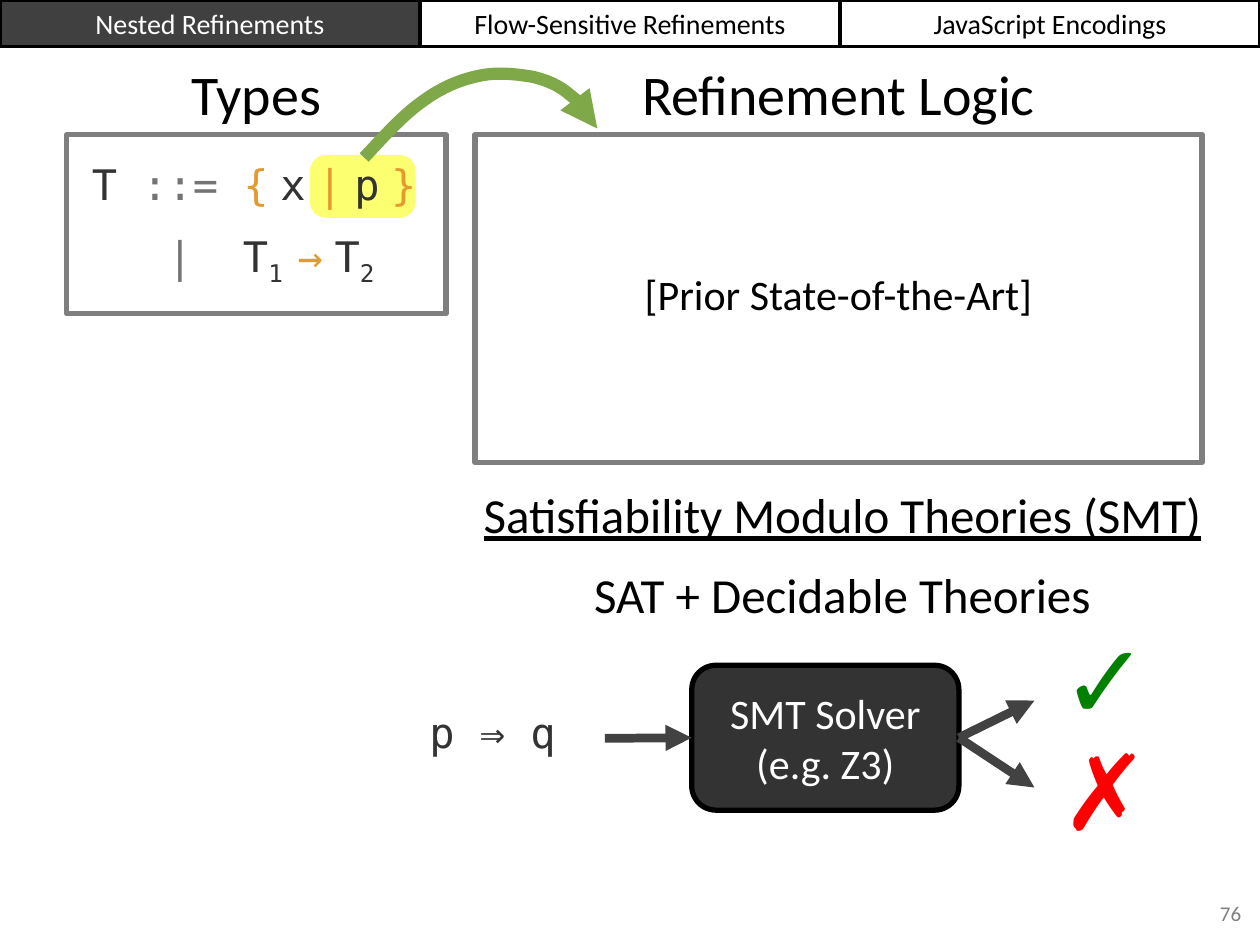
"""Build the slide on refinement types and the SMT solver behind them."""
from dataclasses import dataclass
from typing import Optional

from lxml import etree
from pptx import Presentation
from pptx import util as u
from pptx.dml import color
from pptx.enum import shapes, text
from pptx.oxml import ns

SANS, MONO, NARROW = "Calibri", "DejaVu Sans Mono", "Arial"
BLACK, WHITE, INK, GRAY, ORANGE = "000000", "FFFFFF", "333333", "747474", "E39B30"
PANEL_LINE, ARROW, GREEN_ARROW = "7F7F7F", "424242", "7FA849"
CENTER, LEFT, RIGHT = text.PP_ALIGN.CENTER, text.PP_ALIGN.LEFT, text.PP_ALIGN.RIGHT
ROUNDED, RECTANGLE = shapes.MSO_SHAPE.ROUNDED_RECTANGLE, shapes.MSO_SHAPE.RECTANGLE


@dataclass
class Box:
    left: float
    top: float
    width: float
    height: float

    def lengths(self) -> list:
        return [u.Inches(n) for n in (self.left, self.top, self.width, self.height)]


@dataclass
class Style:
    size: float
    font: str = SANS
    color: str = BLACK
    align: text.PP_ALIGN = CENTER
    wrap: bool = True


@dataclass
class Span:
    text: str
    color: str = INK
    subscript: bool = False
    font: str = MONO


@dataclass
class Label:
    text: str
    box: Box
    style: Style


@dataclass
class Tab:
    text: str
    ink: str = BLACK
    fill: Optional[str] = None


TABS = [Tab("Nested Refinements", WHITE, "404040"),
        Tab("Flow-Sensitive Refinements"), Tab("JavaScript Encodings")]
HEADING = Style(32)
LOGIC_TITLE = Box(3.77, 0.42, 5.77, 0.64)
PANELS = [Box(0.53, 1.07, 3.01, 1.42), Box(3.77, 1.07, 5.77, 2.6)]
LABELS = [
    Label("Types", Box(0.53, 0.42, 3.01, 0.64), HEADING),
    Label("[Prior State-of-the-Art]", Box(3.77, 1.83, 5.77, 1), Style(24)),
    Label("p ⇒ q", Box(3.31, 5.56, 1.37, 0.5), Style(24, MONO, INK, LEFT)),
    Label("✓", Box(8.33, 4.82, 0.84, 1.11), Style(60, "Arial", "008000", LEFT)),
    Label("✗", Box(8.33, 5.7, 0.69, 1.11), Style(60, "Arial", "FF0000", LEFT)),
    Label("76", Box(7.62, 7.05, 2.33, 0.4), Style(12, color="808080", align=RIGHT)),
]
GAP = Span(" ", font=NARROW)
GRAMMAR = [
    [Span("T "), Span("::=", GRAY), Span(" {", ORANGE), GAP, Span("x"), GAP,
     Span("|", ORANGE), GAP, Span("p"), GAP, Span("}", ORANGE)],
    [Span("|\t", GRAY), Span("T"), Span("1 ", subscript=True), Span("→", ORANGE), GAP,
     Span("T"), Span("2", subscript=True)],
]
CURVE = [(2.89, 1.25), (3.05, 1.08), (3.2, 0.91), (3.36, 0.8),
         (3.51, 0.69), (3.66, 0.63), (3.81, 0.6),
         (3.95, 0.57), (4.11, 0.59), (4.23, 0.61),
         (4.35, 0.64), (4.44, 0.68), (4.52, 0.75),
         (4.61, 0.82), (4.67, 0.92), (4.74, 1.02)]


def paint(target, value: str) -> None:
    """Apply a hex colour to a fill, line or font."""
    if hasattr(target, "solid"):
        target.solid()
        target = target.fore_color
    else:
        target = target.color
    target.rgb = color.RGBColor.from_string(value)


def format_span(span, style: Style) -> None:
    """Give a run its font, size and colour."""
    span.font.name, span.font.size = style.font, u.Pt(style.size)
    paint(span.font, style.color)


def write(shape, content: str, style: Style) -> None:
    """Fill a shape with vertically centred text in one style."""
    frame = shape.text_frame
    frame.text = content
    frame.auto_size = text.MSO_AUTO_SIZE.NONE
    frame.word_wrap = style.wrap
    frame.vertical_anchor = text.MSO_ANCHOR.MIDDLE
    for para in frame.paragraphs:
        para.alignment = style.align
        for span in para.runs:
            format_span(span, style)


def place(shape, box: Box) -> None:
    """Move and size a placeholder."""
    shape.left, shape.top, shape.width, shape.height = box.lengths()


def add_shape(page, box: Box, kind=ROUNDED, fill: Optional[str] = None,
              line: Optional[str] = None, weight: float = 3, corner: float = 0):
    """Draw a preset shape without a shadow."""
    shape = page.shapes.add_shape(kind, *box.lengths())
    shape.shadow.inherit = False
    if kind == ROUNDED:
        shape.adjustments[0] = corner
    if fill:
        paint(shape.fill, fill)
    else:
        shape.fill.background()
    if line:
        paint(shape.line, line)
        shape.line.width = u.Pt(weight)
    else:
        shape.line.fill.background()
    return shape


def point_line(shape, value: str, weight: float) -> None:
    """Colour a line and end it with a triangle."""
    paint(shape.line, value)
    shape.line.width = u.Pt(weight)
    etree.SubElement(shape.line._get_or_add_ln(), ns.qn("a:tailEnd"), type="triangle")


def add_arrow(page, start: tuple, end: tuple):
    """Draw a straight arrow without a shadow."""
    arrow = page.shapes.add_connector(
        shapes.MSO_CONNECTOR.STRAIGHT, *[u.Inches(n) for n in (*start, *end)])
    point_line(arrow, ARROW, 5)
    etree.SubElement(arrow._element.spPr, ns.qn("a:effectLst"))
    return arrow


def add_curve(page, points: list) -> None:
    """Draw a cubic curve with an arrowhead through knots and control points."""
    start, *rest = [(u.Inches(x), u.Inches(y)) for x, y in points]
    builder = page.shapes.build_freeform(*start)
    builder.add_line_segments(rest, close=False)
    curve = builder.convert_to_shape()
    curve.shadow.inherit = False
    curve.fill.background()
    point_line(curve, GREEN_ARROW, 7)
    outline = next(curve._element.iter(ns.qn("a:path")))
    steps = outline.findall(ns.qn("a:lnTo"))
    for first in range(0, len(steps), 3):
        bend = etree.SubElement(outline, ns.qn("a:cubicBezTo"))
        for step in steps[first:first + 3]:
            bend.append(step[0])
            outline.remove(step)


def add_grammar(page) -> None:
    """Write the grammar of types in coloured spans."""
    frame = page.shapes.add_textbox(*Box(0.63, 1.21, 3.52, 1.65).lengths()).text_frame
    frame.word_wrap = True
    for number, spans in enumerate(GRAMMAR):
        para = frame.add_paragraph() if number else frame.paragraphs[0]
        para.space_after = u.Pt(12)
        for item in spans:
            span = para.add_run()
            span.text = item.text
            format_span(span, Style(24, item.font, item.color))
            if item.subscript:
                span._r.get_or_add_rPr().set("baseline", "-25000")
    margins = para._p.get_or_add_pPr()
    margins.set("marL", str(u.Inches(1.2)))
    margins.set("indent", str(u.Inches(-0.6)))


def add_theories(body) -> None:
    """Write the two centred lines about SMT without bullets."""
    place(body, Box(3.68, 3.79, 6.01, 1.21))
    write(body, "Satisfiability Modulo Theories (SMT)\nSAT + Decidable Theories", Style(28))
    for para in body.text_frame.paragraphs:
        para.space_before, para.space_after = u.Pt(0), u.Pt(12)
        props = para._p.get_or_add_pPr()
        props.set("marL", "0")
        props.set("indent", "0")
        etree.SubElement(props, ns.qn("a:buNone"))
    body.text_frame.paragraphs[0].runs[0].font.underline = True


def add_solver(page) -> None:
    """Draw the solver with its input and its two outcomes."""
    solver = add_shape(page, Box(5.49, 5.28, 2.12, 1.15), fill=INK, line=BLACK, corner=0.167)
    write(solver, "SMT Solver\v(e.g. Z3)", Style(24, color=WHITE, wrap=False))
    for height in (5.56, 6.25):
        add_arrow(page, (7.61, 5.85), (8.21, height)).begin_connect(solver, 3)
    add_arrow(page, (4.8, 5.86), (5.49, 5.85)).end_connect(solver, 1)


def main() -> None:
    """Build and save the deck."""
    deck = Presentation()
    deck.slide_width, deck.slide_height = u.Inches(10), u.Inches(7.5)
    page = deck.slides.add_slide(deck.slide_layouts[1])
    title, body = page.placeholders
    place(title, LOGIC_TITLE)
    write(title, "Refinement Logic", HEADING)
    add_theories(body)
    add_shape(page, Box(2.46, 1.23, 0.84, 0.5), fill="FBFF70", corner=0.26)
    add_grammar(page)
    for panel in PANELS:
        add_shape(page, panel, line=PANEL_LINE)
    add_curve(page, CURVE)
    for label in LABELS:
        write(page.shapes.add_textbox(*label.box.lengths()), label.text, label.style)
    add_solver(page)
    width = 10 / len(TABS)
    for number, tab in reversed(list(enumerate(TABS))):
        shape = add_shape(page, Box(number * width, 0, width, 0.37), RECTANGLE,
                          tab.fill, BLACK, 2)
        write(shape, tab.text, Style(16, color=tab.ink))
    deck.save("out.pptx")


if __name__ == "__main__":
    main()
